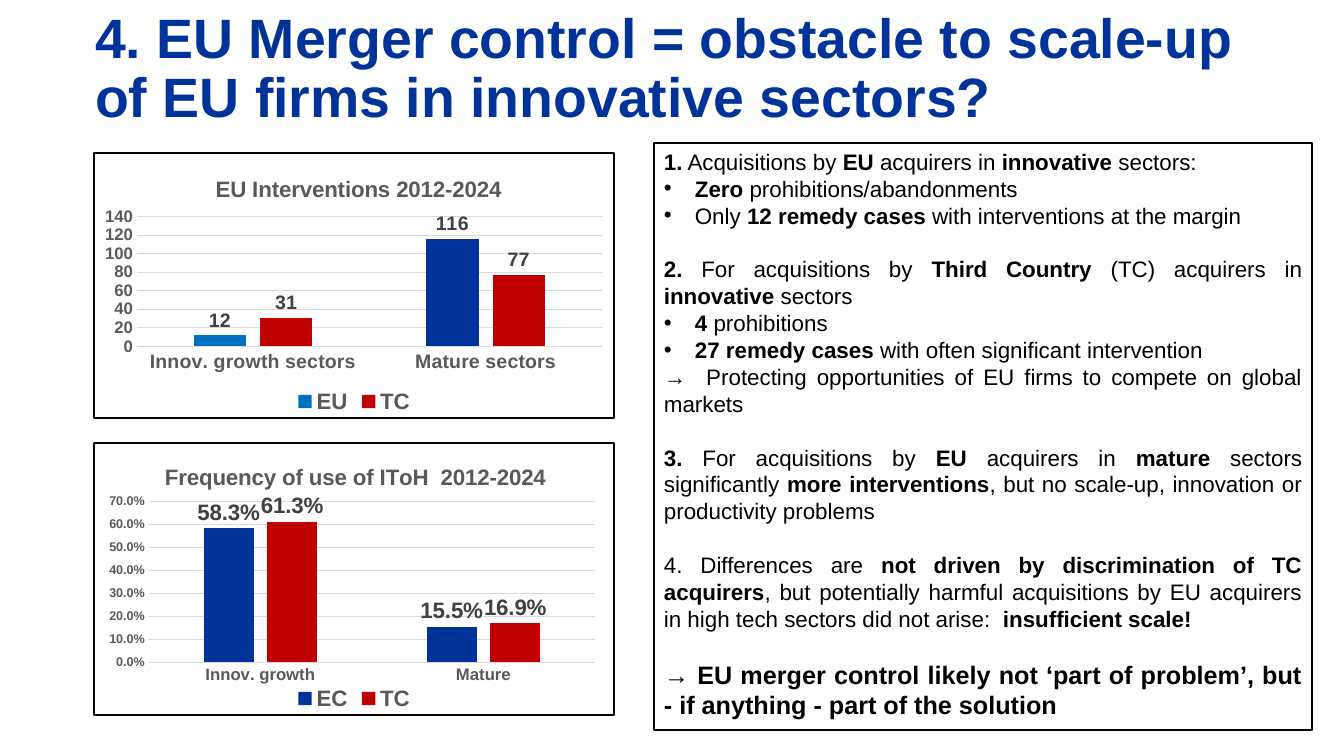
from lxml.etree import SubElement
from pptx import Presentation
from pptx.chart.data import CategoryChartData
from pptx.dml.color import RGBColor
from pptx.enum.chart import XL_CHART_TYPE, XL_LABEL_POSITION, XL_LEGEND_POSITION, XL_TICK_MARK
from pptx.enum.text import MSO_ANCHOR, MSO_AUTO_SIZE, PP_ALIGN
from pptx.oxml import parse_xml
from pptx.oxml.ns import nsdecls, qn
from pptx.util import Emu, Pt

BLUE = RGBColor(0x00, 0x33, 0x99)
LIGHT_BLUE = RGBColor(0x00, 0x70, 0xC0)
RED = RGBColor(0xC0, 0x00, 0x00)
BLACK = RGBColor(0x00, 0x00, 0x00)
GREY = RGBColor(0x59, 0x59, 0x59)
LABEL_GREY = RGBColor(0x40, 0x40, 0x40)
GRID_GREY = RGBColor(0xD9, 0xD9, 0xD9)
FONT = "Arial"
SCALE = 914400 / 100.8  # EMU per px
BULLET_INDENT = 31
SECTION_GAP = 27

# Each section of the findings is a list of paragraphs; ** marks bold text
FINDINGS = [
    ["**1.** Acquisitions by **EU **acquirers in **innovative **sectors:",
     "• **Zero** prohibitions/abandonments",
     "• Only **12 remedy cases **with interventions at the margin"],
    ["**2.** For acquisitions by **Third Country **(TC) acquirers in **innovative **sectors",
     "• **4** prohibitions",
     "• **27 remedy cases **with often significant intervention",
     "→  Protecting opportunities of EU firms to compete on global markets"],
    ["**3.** For acquisitions by **EU **acquirers in **mature **sectors significantly "
     "**more interventions**, but no scale-up, innovation or productivity problems"],
    ["4. Differences are **not driven by discrimination of TC acquirers**, but potentially "
     "harmful acquisitions by EU acquirers in high tech sectors did not arise:  "
     "**insufficient scale!**"],
    ["**→ EU merger control likely not ‘part of problem’, but - if anything - "
     "part of the solution**"],
]


def px(length):
    return Emu(round(length * SCALE))


def set_font(font, size, color, bold=True):
    font.name = FONT
    font.size = Pt(size)
    font.bold = bold
    font.color.rgb = color


def place_title(slide, box, text):
    title = slide.shapes.title
    title.left, title.top, title.width, title.height = map(px, box)
    frame = title.text_frame
    frame.text = text
    frame.word_wrap = True
    frame.auto_size = MSO_AUTO_SIZE.NONE
    frame.vertical_anchor = MSO_ANCHOR.MIDDLE
    heading = frame.paragraphs[0]
    heading.alignment = PP_ALIGN.LEFT
    heading.line_spacing = 0.9
    set_font(heading.runs[0].font, 39.6, BLUE)


def manual_layout(box, chart_size, inner=False):
    """Layout element for a px box (x, y[, w, h]) inside a chart of the given size."""
    target = '<c:layoutTarget val="inner"/>' if inner else ""
    modes = '<c:xMode val="edge"/><c:yMode val="edge"/>'
    values = "".join(f'<c:{name} val="{length / chart_size[i % 2]:.4f}"/>'
                     for i, (name, length) in enumerate(zip("xywh", box)))
    return parse_xml(f'<c:layout {nsdecls("c")}><c:manualLayout>{target}{modes}'
                     f'{values}</c:manualLayout></c:layout>')


def drop_layout(parent):
    for layout in parent.findall(qn("c:layout")):
        parent.remove(layout)


def format_axes(chart, category_size, value_size, top, step, number_format):
    categories, values = chart.category_axis, chart.value_axis
    for axis, size in ((categories, category_size), (values, value_size)):
        axis.major_tick_mark = axis.minor_tick_mark = XL_TICK_MARK.NONE
        set_font(axis.tick_labels.font, size, GREY)
    values.minimum_scale, values.maximum_scale, values.major_unit = 0, top, step
    values.tick_labels.number_format = number_format
    values.tick_labels.number_format_is_linked = False
    values.format.line.fill.background()
    values.has_major_gridlines = True
    for line in (categories.format.line, values.major_gridlines.format.line):
        line.color.rgb = GRID_GREY
        line.width = Pt(0.75)


def place_chart(slide, box, title, title_at, plot_box, categories, series,
                axis_format, label_size):
    """Bordered column chart; series holds (name, values, colour)."""
    number_format = axis_format[-1]
    data = CategoryChartData(number_format=number_format)
    data.categories = categories
    for name, values, _ in series:
        data.add_series(name, values)
    chart = slide.shapes.add_chart(XL_CHART_TYPE.COLUMN_CLUSTERED, *map(px, box), data).chart
    chart.font.name = FONT
    size = box[2:]

    # Heading
    chart.has_title = True
    chart.chart_title.include_in_layout = False
    frame = chart.chart_title.text_frame
    frame.text = title
    set_font(frame.paragraphs[0].runs[0].font, 16, GREY)
    title_xml = frame.paragraphs[0].runs[0]._r.getparent().getparent().getparent().getparent()
    drop_layout(title_xml)
    title_xml.find(qn("c:tx")).addnext(manual_layout(title_at, size))

    # Legend and axes
    chart.has_legend = True
    chart.legend.position = XL_LEGEND_POSITION.BOTTOM
    chart.legend.include_in_layout = False
    set_font(chart.legend.font, 16, GREY)
    format_axes(chart, *axis_format)

    # Columns
    plot = chart.plots[0]
    plot.gap_width, plot.overlap, plot.vary_by_categories = 219, -27, False
    for columns, (_, _, color) in zip(plot.series, series):
        columns.format.fill.solid()
        columns.format.fill.fore_color.rgb = color
        labels = columns.data_labels
        labels.show_value = True
        labels.position = XL_LABEL_POSITION.OUTSIDE_END
        labels.number_format = number_format
        labels.number_format_is_linked = False
        set_font(labels.font, label_size, LABEL_GREY)

    # Plot position and outer border
    chart_xml = chart._chartSpace.find(qn("c:chart"))
    plot_area = chart_xml.find(qn("c:plotArea"))
    drop_layout(plot_area)
    plot_area.insert(0, manual_layout(plot_box, size, inner=True))
    chart_xml.addnext(parse_xml(
        f'<c:spPr {nsdecls("c", "a")}><a:noFill/><a:ln w="{Pt(1.5)}"><a:solidFill>'
        f'<a:srgbClr val="{BLACK}"/></a:solidFill></a:ln></c:spPr>'))
    return chart


def add_bullet(paragraph):
    properties = paragraph._p.get_or_add_pPr()
    properties.set("marL", str(px(BULLET_INDENT)))
    properties.set("indent", str(px(-BULLET_INDENT)))
    SubElement(properties, qn("a:buFont")).set("typeface", FONT)
    SubElement(properties, qn("a:buChar")).set("char", "•")


def place_findings(slide, box, sections):
    panel = slide.shapes.add_textbox(*map(px, box))
    panel.line.color.rgb = BLACK
    panel.line.width = Pt(1.5)
    frame = panel.text_frame
    frame.word_wrap = True
    frame.auto_size = MSO_AUTO_SIZE.SHAPE_TO_FIT_TEXT
    for section_index, section in enumerate(sections):
        text_size = 18 if section is sections[-1] else 16
        for line_index, line in enumerate(section):
            is_first = section_index == line_index == 0
            finding = frame.paragraphs[0] if is_first else frame.add_paragraph()
            if line.startswith("• "):
                add_bullet(finding)
                line = line[2:]
            finding.alignment = PP_ALIGN.JUSTIFY
            if section_index and not line_index:
                finding.space_before = px(SECTION_GAP)
            for part_index, part in enumerate(line.split("**")):
                if part:
                    run = finding.add_run()
                    run.text = part
                    set_font(run.font, text_size, BLACK, bold=part_index % 2 == 1)


def main():
    presentation = Presentation()
    presentation.slide_width, presentation.slide_height = px(1344), px(756)
    slide = presentation.slides.add_slide(presentation.slide_layouts[5])

    place_title(slide, (85, 25, 1159, 90),
                "4. EU Merger control = obstacle to scale-up of EU firms in innovative sectors?")

    interventions = place_chart(
        slide, (93, 152, 522, 267), "EU Interventions 2012-2024", (118, 18),
        (43, 64, 467, 131), ["Innov. growth sectors", "Mature sectors"],
        [("EU", (12, 116), LIGHT_BLUE), ("TC", (31, 77), RED)],
        axis_format=(14, 12, 140, 20, "General"), label_size=14)
    mature_eu = interventions.plots[0].series[0].points[1].format.fill
    mature_eu.solid()
    mature_eu.fore_color.rgb = BLUE

    place_findings(slide, (654, 143, 658, 587), FINDINGS)

    place_chart(
        slide, (93, 442, 522, 274), "Frequency of use of IToH  2012-2024", (67, 16),
        (55, 59, 448, 162), ["Innov. growth", "Mature"],
        [("EC", (0.583, 0.155), BLUE), ("TC", (0.613, 0.169), RED)],
        axis_format=(12, 9, 0.7, 0.1, "0.0%"), label_size=16)

    presentation.save("out.pptx")


if __name__ == "__main__":
    main()
